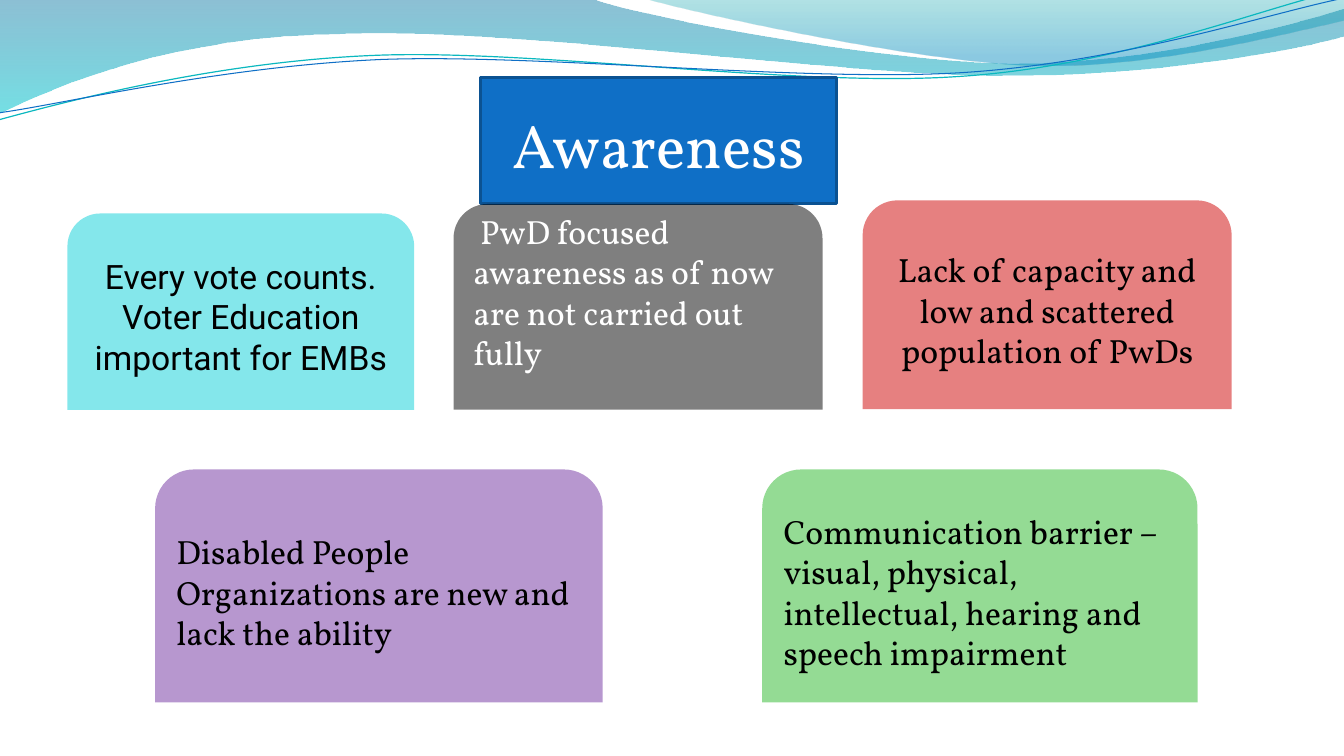
import pptx
import pptx.util
import pptx.dml.color
import pptx.enum.shapes
import pptx.enum.text
import pptx.oxml.ns
import lxml.etree

Cm = pptx.util.Cm
Pt = pptx.util.Pt
Rgb = pptx.dml.color.RGBColor.from_string
Kind = pptx.enum.shapes.MSO_SHAPE
Align = pptx.enum.text.PP_ALIGN
qn = pptx.oxml.ns.qn

theme = {
    "serif": "Vollkorn", "sans": "Roboto",
    "head": 44, "body": 24,
    "white": "FFFFFF", "black": "000000",
    "blue": "0F6FC6", "navy": "0B5292", "teal": "0AB8BF",
    "aqua": "0BD0D9", "red": "CF0303", "plum": "7030A0", "green": "2BB92B",
    "wide": [("0074A1", 0, 45), ("00C6CF", 1, 55)],
    "crest": [("00A1A9", 0, 30), ("008BBF", 0.8, 45)],
}

deck = pptx.Presentation()
deck.slide_width, deck.slide_height = Cm(33.87), Cm(19.05)
slide = deck.slides.add_slide(deck.slide_layouts[6])


def fade(shape, levels):
    for color, level in zip(shape.element.spPr.iter(qn("a:srgbClr")), levels):
        lxml.etree.SubElement(color, qn("a:alpha"), val=str(level * 1000))


def write(shape, text, font, size, color, align):
    frame = shape.text_frame
    frame.word_wrap = True
    frame.vertical_anchor = pptx.enum.text.MSO_ANCHOR.MIDDLE
    frame.text = text
    para = frame.paragraphs[0]
    para.alignment = align
    face = para.runs[0].font
    face.name, face.size = theme[font], Pt(theme[size])
    face.color.rgb = Rgb(theme[color])


waves = [
    ("wide", 0, [
        (0, 0), (14.91, -0.03),
        (16.1, 0.43, 22.48, 1.6, 25.68, 1.6),
        (28.91, 1.6, 32.46, 0.66, 33.86, 0.23),
        (33.91, 0.91),
        (33.3, 1.12, 29.46, 1.93, 25.25, 1.91),
        (21.06, 1.91, 12.93, 0.71, 8.71, 0.86),
        (4.34, 0.91, 1.55, 2.11, -0.03, 2.87)]),
    ("crest", 0, [
        (16.23, -0.03),
        (17.25, 0.28, 23.09, 1.57, 26.04, 1.65),
        (28.98, 1.75, 32.56, 0.81, 33.86, 0.53),
        (33.86, 0)]),
    ("teal", 0.85, [
        (-0.03, 3.02),
        (1.63, 2.57, 5.36, 1.57, 9.37, 1.4),
        (13.39, 1.22, 20.07, 2.21, 24.13, 1.93),
        (28.19, 1.68, 31.8, 0.2, 33.81, -0.25)]),
    ("blue", 0.75, [
        (0, 2.84),
        (1.6, 2.62, 5.54, 1.68, 9.6, 1.5),
        (13.64, 1.35, 20.22, 2.08, 24.26, 1.83),
        (28.32, 1.57, 31.88, 0.36, 33.88, -0.05)]),
]
for tint, weight, path in waves:
    dots = [(Cm(x), Cm(y)) for part in path for x, y in zip(part[::2], part[1::2])]
    pen = slide.shapes.build_freeform(*dots[0])
    pen.add_line_segments(dots[1:], close=not weight)
    wave = pen.convert_to_shape()
    wave.shadow.inherit = False

    lines = iter(list(wave.element.spPr.iter(qn("a:lnTo"))))
    for part in path[1:]:
        group = [next(lines) for x in part[::2]]
        if len(group) == 3:
            curve = lxml.etree.Element(qn("a:cubicBezTo"))
            group[0].addprevious(curve)
            for line in group:
                curve.append(line[0])
                line.getparent().remove(line)

    if weight:
        wave.fill.background()
        wave.line.color.rgb = Rgb(theme[tint])
        wave.line.width = Pt(weight)
    else:
        wave.line.fill.background()
        wave.fill.gradient()
        wave.fill.gradient_angle = 270
        for stop, (color, place, level) in zip(wave.fill.gradient_stops, theme[tint]):
            stop.color.rgb = Rgb(color)
            stop.position = place
        fade(wave, [level for color, place, level in theme[tint]])

title = slide.shapes.add_shape(Kind.RECTANGLE, Cm(12.12), Cm(1.96), Cm(8.97), Cm(3.18))
title.shadow.inherit = False
title.fill.solid()
title.fill.fore_color.rgb = Rgb(theme["blue"])
title.line.color.rgb = Rgb(theme["navy"])
title.line.width = Pt(2)
write(title, "Awareness", "serif", "head", "white", Align.CENTER)
box = title.text_frame
box.margin_left = box.margin_right = box.margin_bottom = 0
box.margin_top = Cm(0.13)

cards = [
    (1.7, 5.38, 8.74, 4.95, "aqua", "sans", "black", Align.CENTER,
     "Every vote counts. Voter Education important for EMBs"),
    (11.43, 5.14, 9.3, 5.18, "black", "serif", "white", Align.LEFT,
     " PwD focused awareness as of now are not carried out fully"),
    (21.74, 5.05, 9.3, 5.26, "red", "serif", "black", Align.CENTER,
     "Lack of capacity and low and scattered population of PwDs"),
    (3.91, 11.83, 11.28, 5.87, "plum", "serif", "black", Align.LEFT,
     "Disabled People Organizations are new and lack the ability"),
    (19.21, 11.83, 10.97, 5.87, "green", "serif", "black", Align.LEFT,
     "Communication barrier – visual, physical, intellectual, hearing and speech impairment"),
]
for left, top, width, height, tint, font, ink, align, text in cards:
    card = slide.shapes.add_shape(Kind.ROUND_2_SAME_RECTANGLE,
                                  Cm(left), Cm(top), Cm(width), Cm(height))
    card.shadow.inherit = False
    card.line.fill.background()
    card.fill.solid()
    card.fill.fore_color.rgb = Rgb(theme[tint])
    fade(card, [50])
    write(card, text, font, "body", ink, align)
    if ink == "white":
        card.text_frame.margin_bottom = Cm(1.15)

deck.save("out.pptx")
